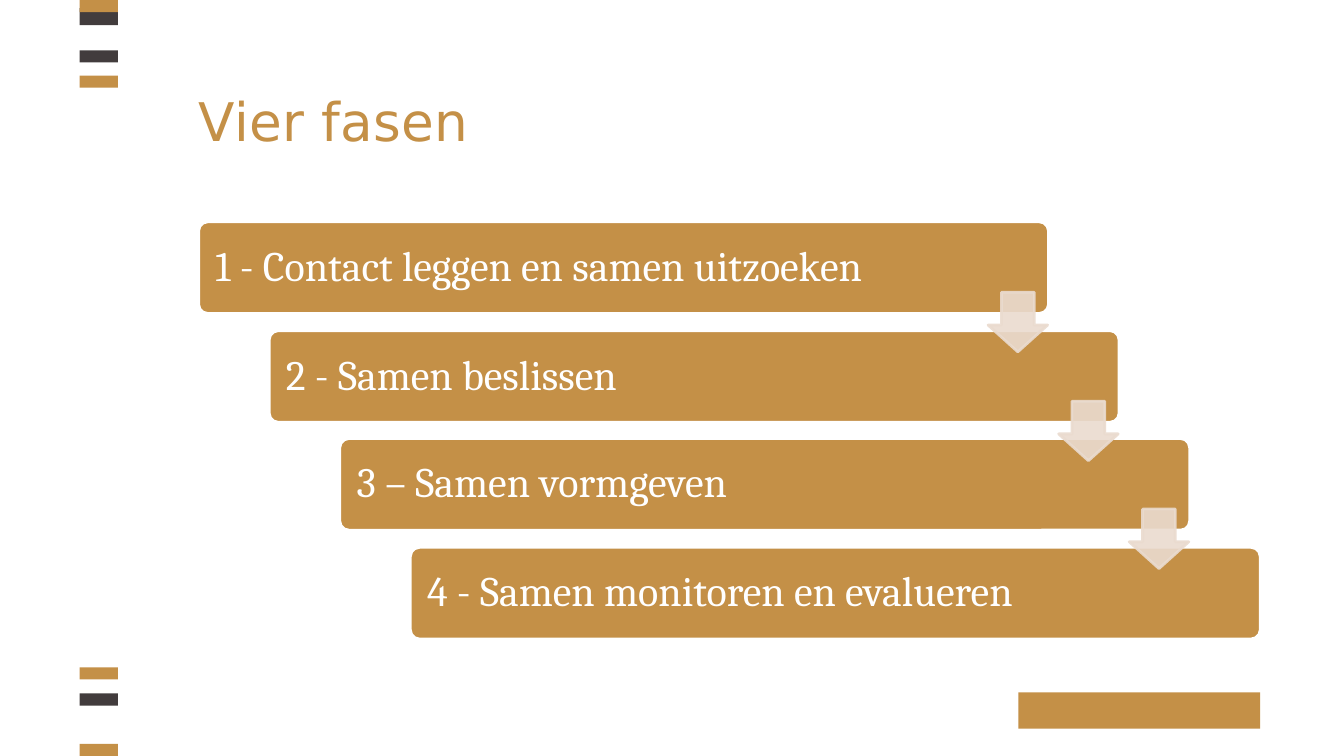
import pptx
import pptx.util
import pptx.dml.color
import pptx.enum.shapes
import pptx.enum.text
import pptx.oxml

SCALE = 9144  # EMU per px, 100 px to the inch
HUES = {"gold": "C49047", "dark": "423C3D", "sand": "EADBCF", "white": "FFFFFF"}
KINDS = pptx.enum.shapes.MSO_SHAPE
ANCHOR = pptx.enum.text.MSO_ANCHOR
ALIGN = pptx.enum.text.PP_ALIGN

PHASES = [
    "1 - Contact leggen en samen uitzoeken",
    "2 - Samen beslissen",
    "3 – Samen vormgeven",
    "4 - Samen monitoren en evalueren",
]
# top, height, colour of the marks down the left edge
MARKS = [
    (8, 17, "dark"), (0, 12, "gold"), (50, 12, "dark"), (75, 12, "gold"),
    (662, 12, "gold"), (688, 12, "dark"), (738, 12, "gold"),
]


def px(num):
    return pptx.util.Emu(num * SCALE)


def hue(name):
    return pptx.dml.color.RGBColor.from_string(HUES[name])


def apply(item, form):
    """Set every attribute named in the dict form on item."""
    for key, val in form.items():
        setattr(item, key, val)


class Deck:
    def __init__(self, wide, high):
        self.file = pptx.Presentation()
        apply(self.file, {"slide_width": px(wide), "slide_height": px(high)})
        self.slide = self.file.slides.add_slide(self.file.slide_layouts[5])

    def label(self, shape, text, font, frame):
        body = shape.text_frame
        apply(body, {"word_wrap": True, "auto_size": pptx.enum.text.MSO_AUTO_SIZE.NONE})
        apply(body, frame)
        para = body.paragraphs[0]
        para.alignment = ALIGN.LEFT
        run = para.add_run()
        run.text = text
        apply(run.font, {"name": font[0], "size": pptx.util.Pt(font[1])})
        run.font.color.rgb = hue(font[2])
        return para, run

    def title(self, text, left, top, wide, high):
        shape = self.slide.shapes.title
        apply(shape, {"left": px(left), "top": px(top),
                      "width": px(wide), "height": px(high)})
        frame = {"vertical_anchor": ANCHOR.TOP}
        frame.update({f"margin_{side}": 0 for side in ("left", "right", "top", "bottom")})
        run = self.label(shape, text, ("DejaVu Sans", 38, "gold"), frame)[1]
        run.font._element.set("spc", "20")

    def shape(self, kind, left, top, wide, high, fill, line=None, adj=()):
        shape = self.slide.shapes.add_shape(kind, px(left), px(top), px(wide), px(high))
        shape.shadow.inherit = False
        shape.fill.solid()
        shape.fill.fore_color.rgb = hue(fill)
        if line:
            shape.line.color.rgb = hue(line)
            shape.line.width = pptx.util.Pt(2)
        else:
            shape.line.fill.background()
        for num, val in enumerate(adj):
            shape.adjustments[num] = val
        return shape

    def bar(self, text, left, top):
        shape = self.shape(KINDS.ROUNDED_RECTANGLE, left, top, 843, 91,
                           "gold", "white", [0.1])
        frame = {"vertical_anchor": ANCHOR.MIDDLE, "margin_left": px(14),
                 "margin_right": px(100)}
        para = self.label(shape, text, ("Cambria", 30, "white"), frame)[0]
        para.line_spacing = 0.9

    def arrow(self, left, top):
        shape = self.shape(KINDS.DOWN_ARROW, left, top, 59, 59,
                           "sand", "sand", [0.55, 0.45])
        for tone in shape._element.spPr.xpath(".//a:srgbClr"):
            alpha = pptx.oxml.xmlchemy.OxmlElement("a:alpha")
            alpha.set("val", "90000")
            tone.append(alpha)


def main():
    deck = Deck(1333, 750)
    for top, high, tone in MARKS:
        deck.shape(KINDS.RECTANGLE, 79, top, 38, high, tone)
    deck.shape(KINDS.RECTANGLE, 1010, 687, 240, 36, "gold")
    deck.title("Vier fasen", 197, 88, 1053, 125)
    spots = [(197 + 70 * step, 220 + round(323 * step / 3))
             for step in range(len(PHASES))]
    for text, (left, top) in zip(PHASES, spots):
        deck.bar(text, left, top)
    for left, top in spots[:-1]:
        deck.arrow(left + 783, top + 70)
    deck.file.save("out.pptx")


if __name__ == "__main__":
    main()
